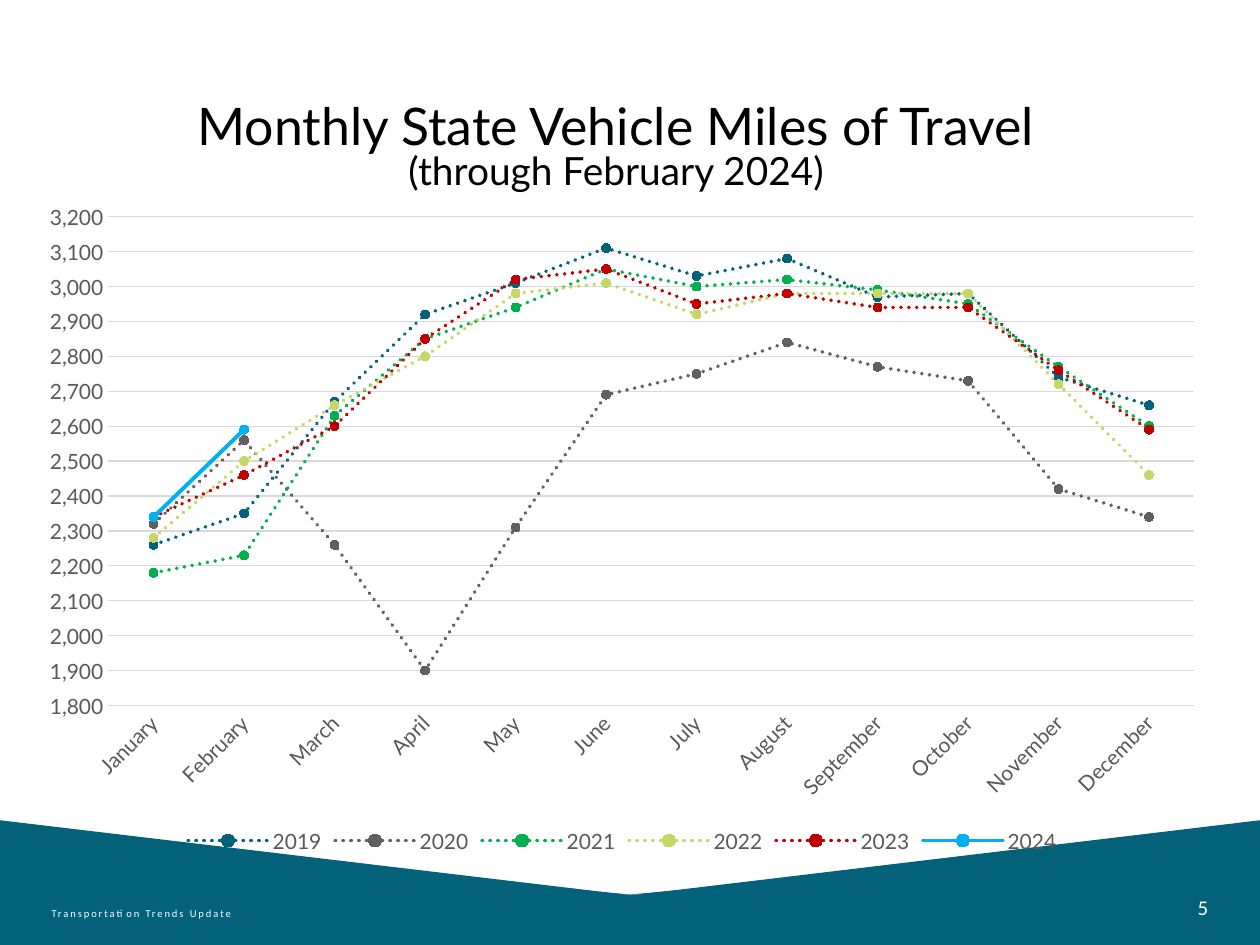
from dataclasses import dataclass
from typing import Optional

import pptx
import pptx.chart.data
import pptx.dml.color
import pptx.enum.chart
import pptx.enum.dml
import pptx.enum.text
import pptx.util
from lxml import etree
from pptx.oxml import ns

RGBColor = pptx.dml.color.RGBColor
Align = pptx.enum.text.PP_ALIGN

TEAL = RGBColor(0x03, 0x61, 0x7A)
GRAY = RGBColor(0x60, 0x60, 0x60)
GREEN = RGBColor(0x00, 0xB0, 0x50)
LIME = RGBColor(0xC6, 0xD6, 0x67)
RED = RGBColor(0xC0, 0x00, 0x00)
SKY = RGBColor(0x00, 0xB0, 0xF0)
WHITE = RGBColor(0xFF, 0xFF, 0xFF)
BLACK = RGBColor(0x00, 0x00, 0x00)
LABEL = RGBColor(0x59, 0x59, 0x59)
GRID = RGBColor(0xD9, 0xD9, 0xD9)

WIDTH, HEIGHT = 10, 7.5
MIDDLE = WIDTH / 2
UNITS_PER_INCH = 100
MONTHS = ["January", "February", "March", "April", "May", "June", "July",
          "August", "September", "October", "November", "December"]


@dataclass(frozen=True)
class Box:
    left: float
    top: float
    width: float
    height: float

    def lengths(self) -> tuple:
        return tuple(pptx.util.Inches(v) for v in
                     (self.left, self.top, self.width, self.height))


@dataclass(frozen=True)
class Line:
    text: str
    size: float


@dataclass(frozen=True)
class Caption:
    box: Box
    lines: tuple
    font: str
    color: RGBColor
    align: Align
    side_inset: float = 0.1
    line_spacing: Optional[float] = None
    tracking: Optional[float] = None


@dataclass(frozen=True)
class Year:
    name: str
    miles: tuple
    color: RGBColor
    dotted: bool = True


CHART_BOX = Box(0.21, 1.52, 9.46, 5.29)
PLOT_BOX = Box(0.86, 1.72, 8.62, 3.88)

BAND = ((0, 6.51), (4.96, 7.1), (5.07, 7.1), (WIDTH, 6.51), (WIDTH, HEIGHT), (0, HEIGHT))
LEFT_WING = ((0, 6.65), (MIDDLE, 7.1), (0, 7.11))
RIGHT_WING = tuple((WIDTH - x, y) for x, y in LEFT_WING)

FOOTER = Caption(Box(0.41, 6.95, 2.67, 0.4), (Line("Transportation Trends Update", 6),),
                 "Calibri", WHITE, Align.LEFT, 0, tracking=1.1)
PAGE = Caption(Box(8.62, 6.95, 0.97, 0.4), (Line("5", 12),),
               "Calibri", WHITE, Align.RIGHT, 0, tracking=1.1)
TITLE = Caption(Box(0.58, 0.75, 8.62, 0.83),
                (Line("Monthly State Vehicle Miles of Travel", 29.6),
                 Line("(through February 2024)", 22.2)),
                "Lato", BLACK, Align.CENTER, line_spacing=0.8)

YEARS = (
    Year("2019", (2260, 2350, 2670, 2920, 3010, 3110, 3030, 3080, 2970, 2980, 2740, 2660), TEAL),
    Year("2020", (2320, 2560, 2260, 1900, 2310, 2690, 2750, 2840, 2770, 2730, 2420, 2340), GRAY),
    Year("2021", (2180, 2230, 2630, 2850, 2940, 3050, 3000, 3020, 2990, 2950, 2770, 2600), GREEN),
    Year("2022", (2280, 2500, 2660, 2800, 2980, 3010, 2920, 2980, 2980, 2980, 2720, 2460), LIME),
    Year("2023", (2340, 2460, 2600, 2850, 3020, 3050, 2950, 2980, 2940, 2940, 2760, 2590), RED),
    Year("2024", (2340, 2590) + (None,) * 10, SKY, dotted=False),
)


def draw_outline(slide, points: tuple) -> None:
    corners = [(x * UNITS_PER_INCH, y * UNITS_PER_INCH) for x, y in points]
    builder = slide.shapes.build_freeform(
        *corners[0], scale=pptx.util.Inches(1) / UNITS_PER_INCH)
    builder.add_line_segments(corners[1:], close=True)
    outline = builder.convert_to_shape()
    outline.shadow.inherit = False
    outline.fill.solid()
    outline.fill.fore_color.rgb = TEAL
    outline.line.fill.background()


def style_font(font, size: float, color: RGBColor, name: str = "Lato") -> None:
    font.size = pptx.util.Pt(size)
    font.color.rgb = color
    font.name = name
    font.bold = False


def draw_caption(slide, caption: Caption) -> None:
    frame = slide.shapes.add_textbox(*caption.box.lengths()).text_frame
    frame.word_wrap = True
    frame.vertical_anchor = pptx.enum.text.MSO_ANCHOR.BOTTOM
    frame.margin_left = frame.margin_right = pptx.util.Inches(caption.side_inset)
    frame.text = "\n".join(line.text for line in caption.lines)
    for paragraph, line in zip(frame.paragraphs, caption.lines):
        paragraph.alignment = caption.align
        if caption.line_spacing:
            paragraph.line_spacing = caption.line_spacing
        for run in paragraph.runs:
            style_font(run.font, line.size, caption.color, caption.font)
            if caption.tracking:
                run.font._element.set("spc", str(round(caption.tracking * 100)))


def place_plot(chart, outer: Box, inner: Box) -> None:
    plot_area = chart._chartSpace.chart.plotArea
    for old in plot_area.findall(ns.qn("c:layout")):
        plot_area.remove(old)
    layout = etree.Element(ns.qn("c:layout"))
    manual = etree.SubElement(layout, ns.qn("c:manualLayout"))
    settings = {
        "layoutTarget": "inner", "xMode": "edge", "yMode": "edge",
        "x": (inner.left - outer.left) / outer.width,
        "y": (inner.top - outer.top) / outer.height,
        "w": inner.width / outer.width,
        "h": inner.height / outer.height,
    }
    for tag, value in settings.items():
        etree.SubElement(manual, ns.qn(f"c:{tag}")).set("val", str(value))
    plot_area.insert(0, layout)


def style_year(series, year: Year) -> None:
    series.smooth = False
    series.format.line.color.rgb = year.color
    series.format.line.width = pptx.util.Pt(2.25)
    if year.dotted:
        series.format.line.dash_style = pptx.enum.dml.MSO_LINE.ROUND_DOT
    stroke = series._element.find(ns.qn("c:spPr")).find(ns.qn("a:ln"))
    stroke.set("cap", "rnd")
    etree.SubElement(stroke, ns.qn("a:round"))
    marker = series.marker
    marker.style = pptx.enum.chart.XL_MARKER_STYLE.CIRCLE
    marker.size = 5
    marker.format.fill.solid()
    marker.format.fill.fore_color.rgb = year.color
    marker.format.line.color.rgb = year.color


def draw_chart(slide) -> None:
    data = pptx.chart.data.CategoryChartData(number_format="#,##0")
    data.categories = MONTHS
    for year in YEARS:
        data.add_series(year.name, year.miles)
    chart = slide.shapes.add_chart(pptx.enum.chart.XL_CHART_TYPE.LINE_MARKERS,
                                   *CHART_BOX.lengths(), data).chart
    style_font(chart.font, 10, BLACK)
    chart.has_title = False
    chart.has_legend = True
    chart.legend.position = pptx.enum.chart.XL_LEGEND_POSITION.BOTTOM
    chart.legend.include_in_layout = False
    style_font(chart.legend.font, 12, LABEL)
    chart.plots[0].vary_by_categories = False
    for series, year in zip(chart.plots[0].series, YEARS):
        style_year(series, year)

    months, miles = chart.category_axis, chart.value_axis
    for axis in (months, miles):
        axis.major_tick_mark = axis.minor_tick_mark = pptx.enum.chart.XL_TICK_MARK.NONE
        style_font(axis.tick_labels.font, 12, LABEL)
    months.has_major_gridlines = False
    months._element.txPr.find(ns.qn("a:bodyPr")).set("rot", str(-45 * 60000))
    miles.minimum_scale, miles.maximum_scale, miles.major_unit = 1800, 3200, 100
    miles.tick_labels.number_format = "#,##0"
    miles.tick_labels.number_format_is_linked = False
    miles.format.line.fill.background()
    for rule in (months.format.line, miles.major_gridlines.format.line):
        rule.color.rgb = GRID
        rule.width = pptx.util.Pt(0.75)
    place_plot(chart, CHART_BOX, PLOT_BOX)


def main() -> None:
    deck = pptx.Presentation()
    deck.slide_width = pptx.util.Inches(WIDTH)
    deck.slide_height = pptx.util.Inches(HEIGHT)
    slide = deck.slides.add_slide(deck.slide_layouts[6])
    draw_outline(slide, BAND)
    for caption in (FOOTER, PAGE):
        draw_caption(slide, caption)
    for wing in (LEFT_WING, RIGHT_WING):
        draw_outline(slide, wing)
    draw_chart(slide)
    draw_caption(slide, TITLE)
    deck.save("out.pptx")


if __name__ == "__main__":
    main()
